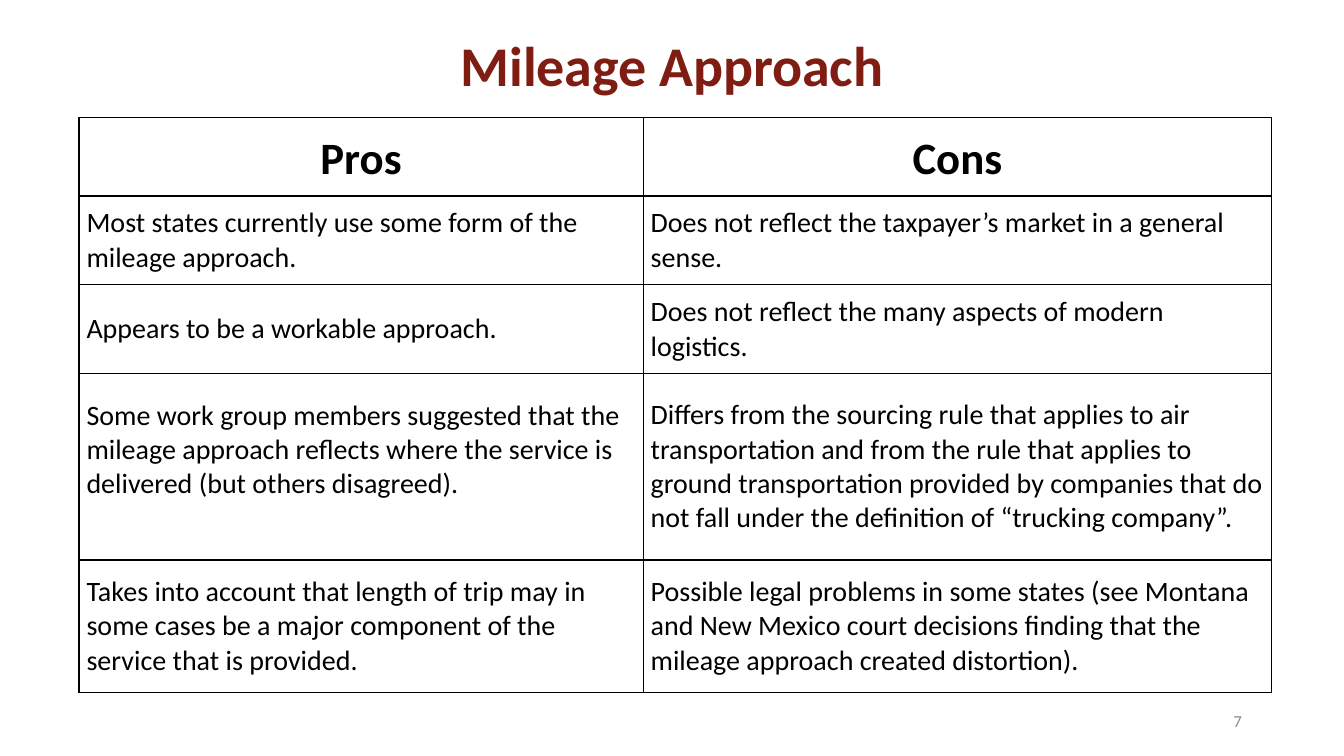
from pptx import Presentation
from pptx.dml.color import RGBColor
from pptx.enum.text import MSO_ANCHOR as Anchor, PP_ALIGN as Align
from pptx.oxml import parse_xml
from pptx.oxml.ns import nsdecls
from pptx.util import Pt

MAROON = RGBColor(0x7F, 0x1D, 0x13)
BLACK = RGBColor(0, 0, 0)
GRAY = RGBColor(0x8C, 0x8C, 0x8C)

ROWS = [
    ("Pros", "Cons"),
    ("Most states currently use some form of the mileage approach.",
     "Does not reflect the taxpayer’s market in a general sense."),
    ("Appears to be a workable approach.",
     "Does not reflect the many aspects of modern logistics."),
    ("Some work group members suggested that the mileage approach reflects "
     "where the service is delivered (but others disagreed).",
     "Differs from the sourcing rule that applies to air transportation and "
     "from the rule that applies to ground transportation provided by "
     "companies that do not fall under the definition of “trucking company”."),
    ("Takes into account that length of trip may in some cases be a major "
     "component of the service that is provided.",
     "Possible legal problems in some states (see Montana and New Mexico court "
     "decisions finding that the mileage approach created distortion)."),
]
COLUMN_WIDTHS = [403, 449]
ROW_HEIGHTS = [56, 63.5, 63.5, 133, 95]


def write(frame, text, size, color, bold=False, align=Align.LEFT, spacing=1.0):
    para = frame.paragraphs[0]
    para.alignment = align
    para.line_spacing = spacing
    span = para.add_run()
    span.text = text
    span.font.name = "Calibri"
    span.font.size = Pt(size)
    span.font.bold = bold
    span.font.color.rgb = color


def add_label(page, left, top, width, height):
    box = page.shapes.add_textbox(Pt(left), Pt(top), Pt(width), Pt(height))
    box.text_frame.word_wrap = True
    box.text_frame.vertical_anchor = Anchor.MIDDLE
    return box.text_frame


deck = Presentation()
deck.slide_width, deck.slide_height = Pt(960), Pt(540)
page = deck.slides.add_slide(deck.slide_layouts[6])

title = add_label(page, 0, 21.6, 960, 54)
write(title, "Mileage Approach", 40, MAROON, True, Align.CENTER, 0.9)

table = page.shapes.add_table(
    len(ROWS), len(COLUMN_WIDTHS), Pt(56.4), Pt(84),
    Pt(sum(COLUMN_WIDTHS)), Pt(sum(ROW_HEIGHTS))).table
table.first_row = False
table.horz_banding = False
for column, width in zip(table.columns, COLUMN_WIDTHS):
    column.width = Pt(width)
for row, height in zip(table.rows, ROW_HEIGHTS):
    row.height = Pt(height)

for row_index, texts in enumerate(ROWS):
    for column_index, text in enumerate(texts):
        cell = table.cell(row_index, column_index)
        cell.vertical_anchor = Anchor.MIDDLE
        cell.margin_left = cell.margin_right = Pt(5.4)
        cell.margin_top = cell.margin_bottom = Pt(7.2)
        if row_index == 0:
            write(cell.text_frame, text, 32, BLACK, True, Align.CENTER, 1.07)
        else:
            write(cell.text_frame, text, 20, BLACK)
        properties = cell._tc.get_or_add_tcPr()
        for side in ("lnL", "lnR", "lnT", "lnB"):
            properties.append(parse_xml(
                f'<a:{side} {nsdecls("a")} w="{Pt(1)}"><a:solidFill>'
                f'<a:srgbClr val="{BLACK}"/></a:solidFill></a:{side}>'))
        cell.fill.background()

table.cell(3, 0).margin_bottom = Pt(31.6)

number = add_label(page, 678.2, 500.4, 216, 28.8)
write(number, "7", 12, GRAY, align=Align.RIGHT)

deck.save("out.pptx")
